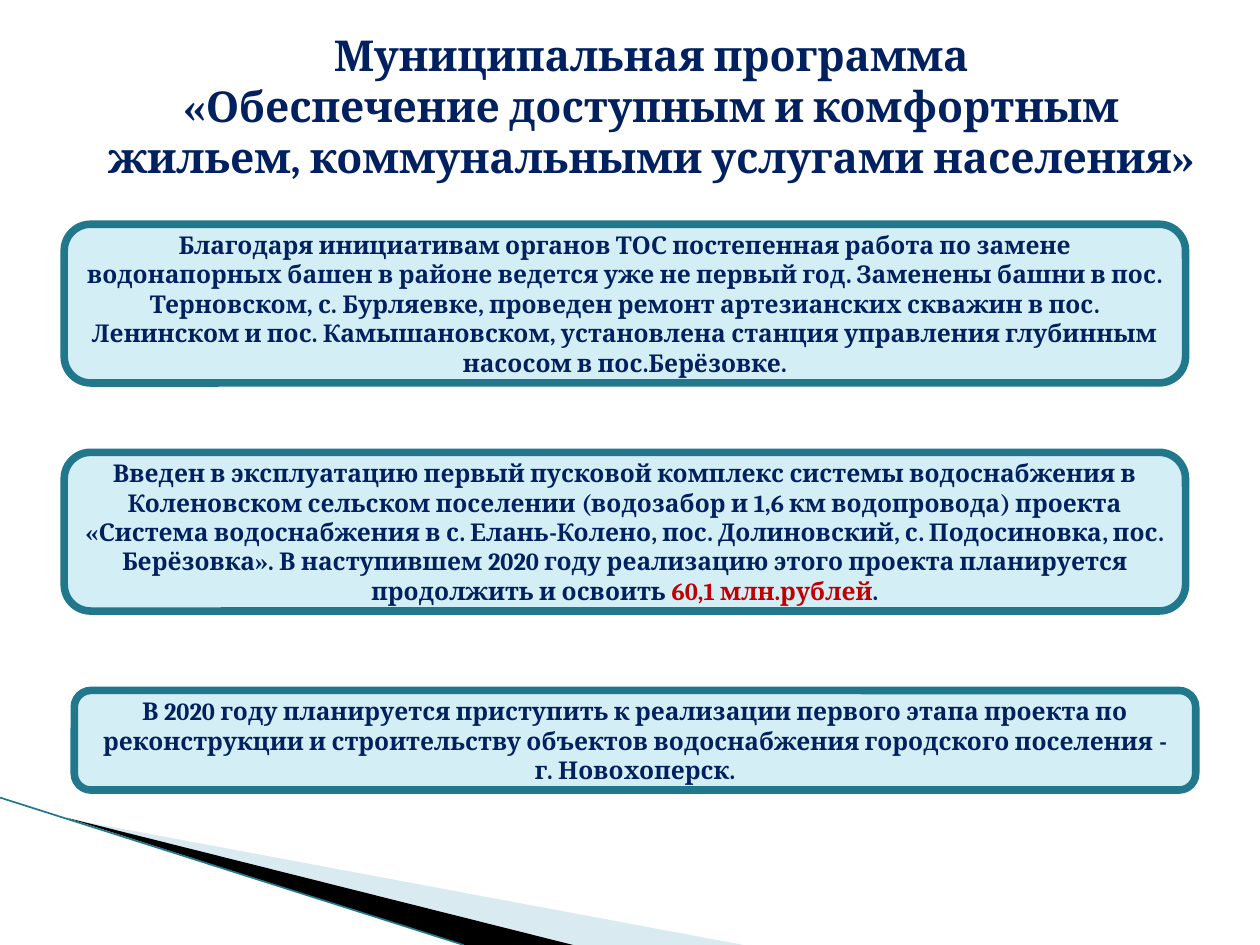
from lxml import etree
from pptx import Presentation
from pptx import util as u
from pptx.dml.color import RGBColor
from pptx.enum import shapes, text
from pptx.oxml.ns import qn

NAVY = RGBColor(0x00, 0x20, 0x60)
RED = RGBColor(0xC0, 0x00, 0x00)
TEAL = RGBColor(0x21, 0x78, 0x8D)
PALE = RGBColor(0xD3, 0xEE, 0xF5)
MIST = RGBColor(0xA0, 0xCB, 0xDC)
BLACK = RGBColor(0, 0, 0)

deck = Presentation()
deck.slide_width, deck.slide_height = u.Inches(10), u.Inches(7.5)
slide = deck.slides.add_slide(deck.slide_layouts[6])


def write(frame, parts, size):
    """Fill a frame with one centred paragraph of (text, colour) runs."""
    frame.word_wrap = True
    frame.vertical_anchor = text.MSO_ANCHOR.MIDDLE
    para = frame.paragraphs[0]
    para.alignment = text.PP_ALIGN.CENTER
    for words, hue in parts:
        for i, line in enumerate(words.split("\n")):
            if i:
                para.add_line_break()
            run = para.add_run()
            run.text = line
            run.font.name = "Cambria"
            run.font.size = u.Pt(size)
            run.font.bold = True
            run.font.color.rgb = hue


# Corner wedges
wedges = [
    ([(0.55, 6.5), (5.9, 7.5), (4.56, 7.5)], MIST, 40),
    ([(0.53, 6.49), (4.55, 7.5), (3.68, 7.5)], BLACK, 100),
]
for points, hue, alpha in wedges:
    spots = [(u.Inches(x), u.Inches(y)) for x, y in points]
    pen = slide.shapes.build_freeform(*spots[0], scale=1.0)
    pen.add_line_segments(spots[1:], close=True)
    wedge = pen.convert_to_shape()
    wedge.shadow.inherit = False
    wedge.line.fill.background()
    wedge.fill.solid()
    wedge.fill.fore_color.rgb = hue
    if alpha < 100:
        tint = wedge.fill._xPr.find(".//" + qn("a:srgbClr"))
        etree.SubElement(tint, qn("a:alpha")).set("val", str(alpha * 1000))

# Thin edge line
edge = slide.shapes.add_connector(
    shapes.MSO_CONNECTOR.STRAIGHT,
    u.Inches(0), u.Inches(6.33), u.Inches(3.68), u.Inches(7.5))
edge.line.color.rgb = TEAL
edge.line.width = u.Pt(0.95)
etree.SubElement(edge._element.spPr, qn("a:effectLst"))

# Title
title = slide.shapes.add_textbox(
    u.Inches(0.67), u.Inches(0.21), u.Inches(9), u.Inches(1.25))
write(title.text_frame, [(
    "Муниципальная программа\n«Обеспечение доступным и комфортным "
    "жильем, коммунальными услугами населения»", NAVY)], 24.3)

# Rounded panels: left, top, height, runs
panels = [
    (0.51, 1.78, 1.26, [(
        "Благодаря инициативам органов ТОС постепенная работа по замене "
        "водонапорных башен в районе ведется уже не первый год. Заменены "
        "башни в пос. Терновском, с. Бурляевке, проведен ремонт артезианских "
        "скважин в пос. Ленинском и пос. Камышановском, установлена станция "
        "управления глубинным насосом в пос.Берёзовке.", NAVY)]),
    (0.51, 3.59, 1.26, [
        ("Введен в эксплуатацию первый пусковой комплекс системы "
         "водоснабжения в Коленовском сельском поселении (водозабор и 1,6 км "
         "водопровода) проекта «Система водоснабжения в с. Елань-Колено, пос. "
         "Долиновский, с. Подосиновка, пос. Берёзовка». В наступившем 2020 "
         "году реализацию этого проекта планируется продолжить и освоить ",
         NAVY),
        ("60,1 млн.рублей", RED),
        (".", NAVY)]),
    (0.59, 5.48, 0.79, [(
        "В 2020 году планируется приступить к реализации первого этапа "
        "проекта по реконструкции и строительству объектов водоснабжения "
        "городского поселения - г. Новохоперск.", NAVY)]),
]
for left, top, high, parts in panels:
    panel = slide.shapes.add_shape(
        shapes.MSO_SHAPE.ROUNDED_RECTANGLE,
        u.Inches(left), u.Inches(top), u.Inches(8.9), u.Inches(high))
    panel.shadow.inherit = False
    panel.fill.solid()
    panel.fill.fore_color.rgb = PALE
    panel.line.color.rgb = TEAL
    panel.line.width = u.Pt(4.33)
    write(panel.text_frame, parts, 14)

deck.save("out.pptx")
